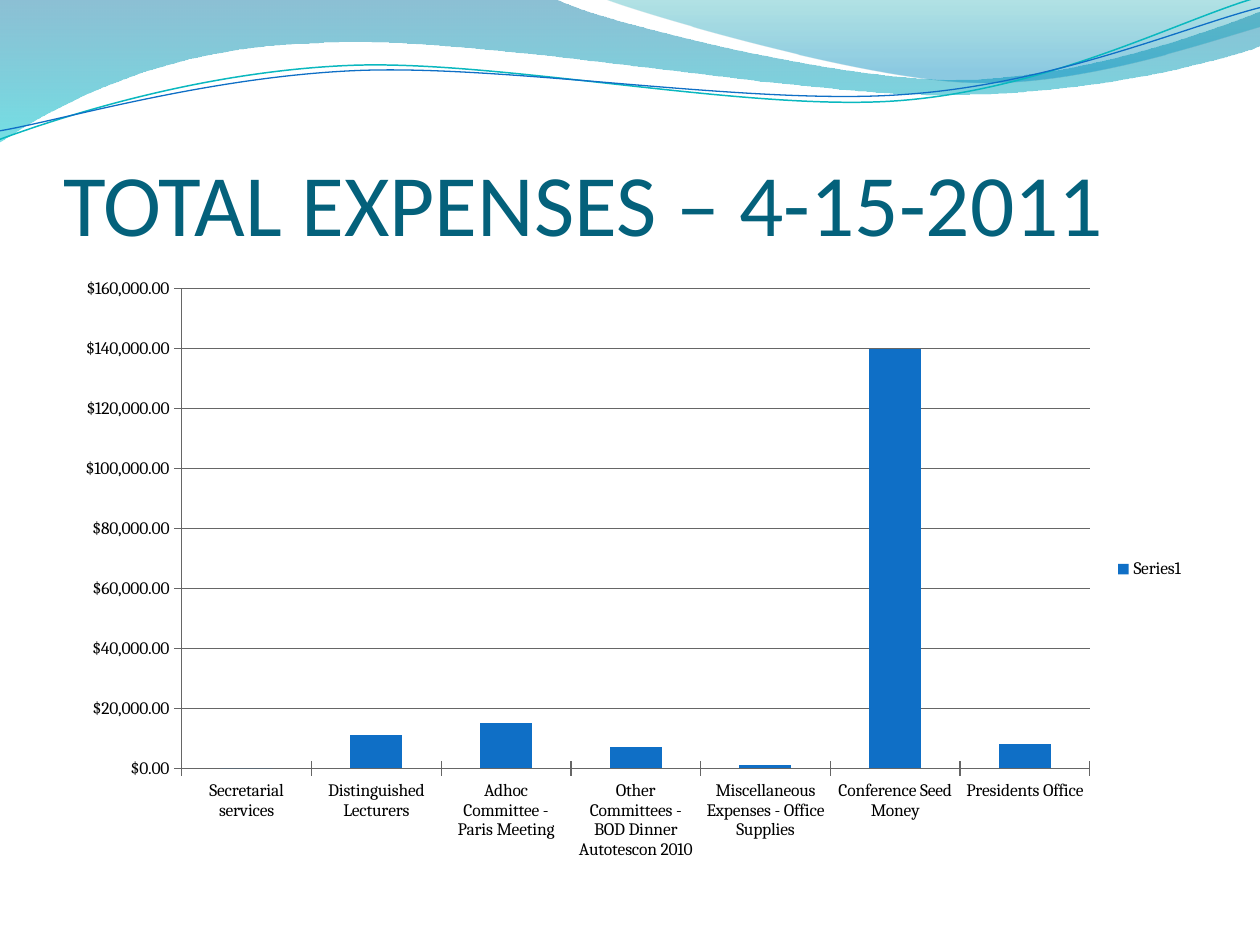
"""Build the total expenses slide: a wave header, a title and a column chart."""
from math import cos, radians, sin
from lxml.etree import SubElement
from pptx import Presentation
from pptx.chart.data import CategoryChartData
from pptx.dml.color import RGBColor
from pptx.enum.chart import XL_CHART_TYPE, XL_LEGEND_POSITION, XL_TICK_MARK
from pptx.enum.text import MSO_ANCHOR, MSO_AUTO_SIZE, PP_ALIGN
from pptx.oxml.ns import qn
from pptx.util import Inches, Pt

COLORS = {
    "title": "04617B", "text": "000000", "column": "0F6FC6", "axis": "666666",
    "wave top": "0074A1", "wave bottom": "00C6CF",
    "crest top": "00A1A9", "crest bottom": "008BBF",
    "teal line": "0AB8BF", "blue line": "0F6FC6",
}
TILT = 2.7

presentation = Presentation()
presentation.slide_width, presentation.slide_height = Inches(10), Inches(7.5)
column = presentation.slide_width / 100
row = presentation.slide_height / 75
slide = presentation.slides.add_slide(presentation.slide_layouts[5])


def color(name):
    return RGBColor.from_string(COLORS[name])


def draw_outline(start, segments, closed):
    """Draw line segments (x, y) and cubic curves (three x, y pairs) in grid units."""
    points = [pair for segment in segments for pair in zip(segment[::2], segment[1::2])]
    builder = slide.shapes.build_freeform(start[0] * column, start[1] * row)
    builder.add_line_segments([(x * column, y * row) for x, y in points], close=closed)
    shape = builder.convert_to_shape()
    shape.shadow.inherit = False
    lines = iter(list(shape._element.spPr.iter(qn("a:lnTo"))))
    for segment in segments:
        line = next(lines)
        if len(segment) == 6:
            line.addprevious(curve := line.makeelement(qn("a:cubicBezTo")))
            for part in (line, next(lines), next(lines)):
                curve.append(part[0])
                part.getparent().remove(part)
    return shape


bands = [
    ((0, 0),
     [(44, -0.1), (47.6, 1.7, 66.4, 6.3, 75.8, 6.3), (85.3, 6.3, 95.8, 2.6, 100, 0.9),
      (100.1, 3.6), (98.3, 4.4, 87, 7.6, 74.6, 7.5), (62.2, 7.5, 38.2, 2.8, 25.7, 3.4),
      (12.9, 3.6, 4.6, 8.3, -0.1, 11.3), (0, 0)],
     [("wave top", 0, 45), ("wave bottom", 1, 55)]),
    ((47.9, -0.1),
     [(50.9, 1.1, 68.2, 6.2, 76.9, 6.5), (85.6, 6.9, 96.1, 3.2, 100, 2.1), (100, 0),
      (47.9, -0.1)],
     [("crest top", 0, 30), ("crest bottom", 0.8, 45)]),
]
for start, segments, stops in bands:
    band = draw_outline(start, segments, True)
    band.line.fill.background()
    band.fill.gradient()
    band.fill.gradient_angle = 270
    for stop, (name, position, opacity) in zip(band.fill.gradient_stops, stops):
        stop.color.rgb = color(name)
        stop.position = position
    for element, (name, position, opacity) in zip(band._element.spPr.iter(qn("a:srgbClr")), stops):
        SubElement(element, qn("a:alpha")).set("val", str(opacity * 1000))

strands = [
    ((-0.1, 11.1),
     [(4.8, 9.3, 15.8, 5.7, 27.7, 5.2), (39.5, 4.7, 59.3, 8.9, 71.3, 8),
      (83.3, 7.1, 93.8, 1.5, 99.8, -0.2)], (49.9, 5.75), "teal line", 0.85),
    ((-0.1, 10.4),
     [(4.7, 9.6, 16.4, 6.1, 28.3, 5.6), (40.3, 5.1, 59.7, 8.4, 71.7, 7.5),
      (83.6, 6.7, 94.1, 2.1, 100, 0.6)], (49.95, 5.9), "blue line", 0.75),
]
cosine, sine = cos(radians(TILT)), sin(radians(TILT))
for start, segments, (middle_x, middle_y), name, width in strands:
    level = []
    for segment in [start] + segments:
        level.append([])
        for x, y in zip(segment[::2], segment[1::2]):
            across, down = x - middle_x, y - middle_y
            level[-1] += [middle_x + across * cosine - down * sine,
                          middle_y + across * sine + down * cosine]
    strand = draw_outline(level[0], level[1:], False)
    strand.rotation = 360 - TILT
    strand.fill.background()
    strand.line.color.rgb = color(name)
    strand.line.width = Pt(width)

title = slide.shapes.title
slide.shapes._spTree.append(title._element)
title.left, title.top = int(5 * column), int(7.7 * row)
title.width, title.height = int(90 * column), int(12.5 * row)
frame = title.text_frame
frame.auto_size = MSO_AUTO_SIZE.NONE
frame.word_wrap = True
frame.vertical_anchor = MSO_ANCHOR.BOTTOM
frame.margin_left = frame.margin_right = frame.margin_bottom = 0
frame.margin_top = Inches(0.05)
paragraph = frame.paragraphs[0]
paragraph.alignment = PP_ALIGN.LEFT
run = paragraph.add_run()
run.text = "TOTAL EXPENSES – 4-15-2011"
run.font.name, run.font.size = "Calibri", Pt(50)
run.font.color.rgb = color("title")

expenses = {
    "Secretarial services": 0,
    "Distinguished Lecturers": 11000,
    "Adhoc Committee - Paris Meeting": 15000,
    "Other Committees - BOD Dinner Autotescon 2010": 7000,
    "Miscellaneous Expenses - Office Supplies": 1000,
    "Conference Seed Money": 140000,
    "Presidents Office": 8000,
}
chart_data = CategoryChartData(number_format='"$"#,##0.00')
chart_data.categories = list(expenses)
chart_data.add_series("", list(expenses.values()))
chart = slide.shapes.add_chart(
    XL_CHART_TYPE.COLUMN_CLUSTERED, int(5 * column), int(21.17 * row),
    int(90 * column), int(48 * row), chart_data).chart
chart.font.name, chart.font.size = "Cambria", Pt(10)
chart.font.color.rgb = color("text")
chart.has_title = False
chart.has_legend = True
chart.legend.position = XL_LEGEND_POSITION.RIGHT
chart.legend.include_in_layout = False

plot = chart.plots[0]
plot.vary_by_categories = False
plot.gap_width = 150
series = plot.series[0]
series._element.remove(series._element.find(qn("c:tx")))
series.format.fill.solid()
series.format.fill.fore_color.rgb = color("column")

value_axis = chart.value_axis
value_axis.has_major_gridlines = True
value_axis.tick_labels.number_format = '"$"#,##0.00'
value_axis.tick_labels.number_format_is_linked = False
for axis in (chart.category_axis, value_axis):
    axis.major_tick_mark = XL_TICK_MARK.CROSS
    axis.minor_tick_mark = XL_TICK_MARK.NONE
for lined in (chart.category_axis, value_axis, value_axis.major_gridlines):
    lined.format.line.color.rgb = color("axis")

presentation.save("out.pptx")
